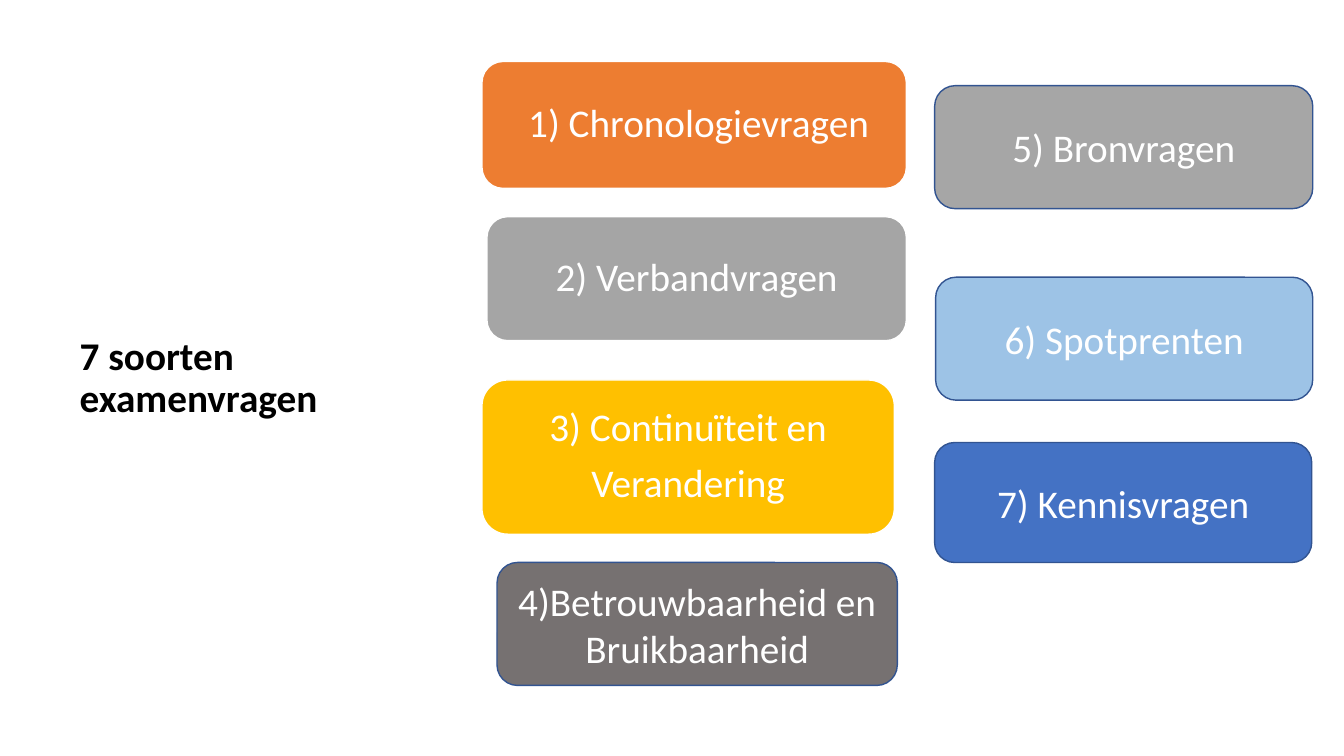
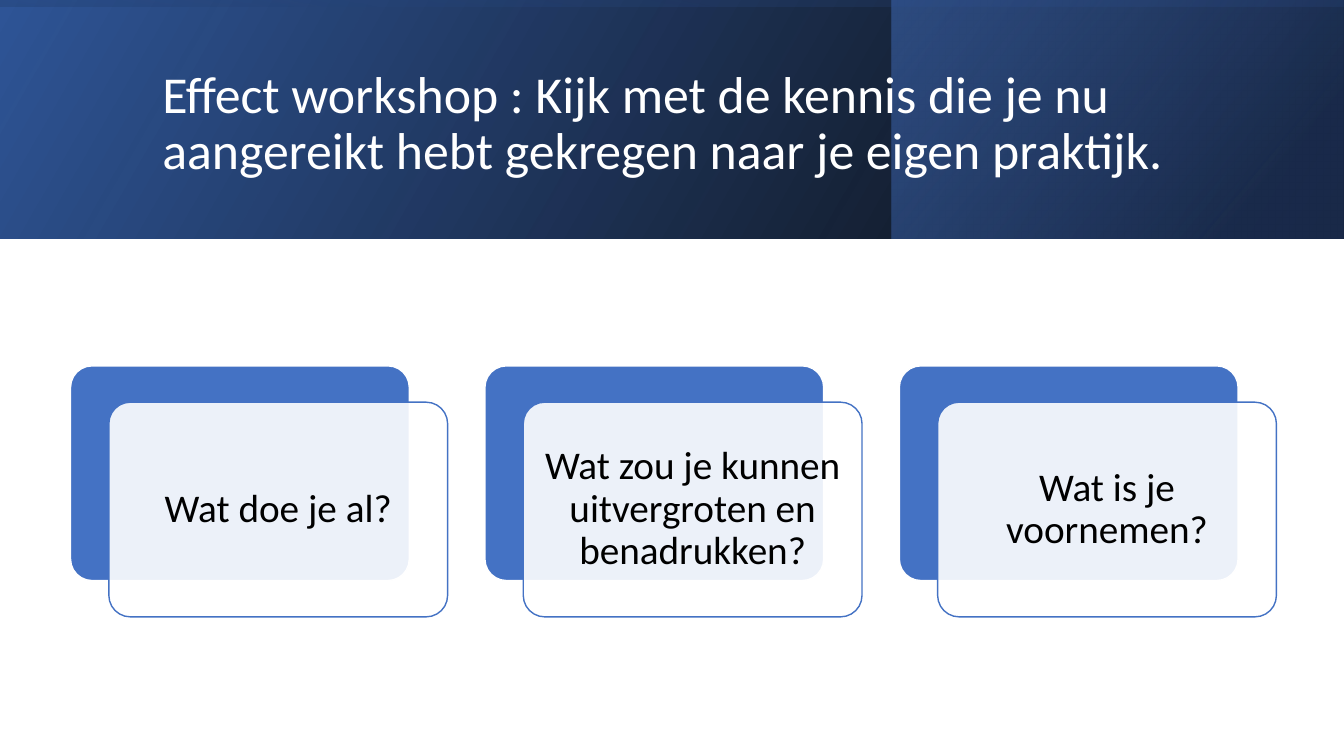
from dataclasses import dataclass
from typing import NamedTuple

from pptx import Presentation
from pptx.dml.color import RGBColor
from pptx.enum.shapes import MSO_SHAPE
from pptx.enum.text import MSO_ANCHOR, MSO_AUTO_SIZE, PP_ALIGN
from pptx.oxml import parse_xml
from pptx.oxml.ns import nsdecls, qn
from pptx.util import Inches, Pt

RECT, ROUND = MSO_SHAPE.RECTANGLE, MSO_SHAPE.ROUNDED_RECTANGLE
MIDDLE, NO_FIT = MSO_ANCHOR.MIDDLE, MSO_AUTO_SIZE.NONE
LEFT, CENTER = PP_ALIGN.LEFT, PP_ALIGN.CENTER


@dataclass(frozen=True)
class Theme:
    font: str = "Calibri"
    body: int = 28
    head: int = 37
    tight: float = 0.9
    gap: int = 10
    white: str = "FFFFFF"
    black: str = "000000"
    blue: str = "4472C4"
    deep: str = "2F5597"
    navy: str = "203864"
    edge: str = "325491"
    orange: str = "ED7D31"
    silver: str = "A5A5A5"
    gray: str = "A6A6A6"
    gold: str = "FFC000"
    slate: str = "767171"
    sky: str = "9DC3E6"


T = Theme()


class Box(NamedTuple):
    x: float
    y: float
    w: float
    h: float


class Style(NamedTuple):
    color: str
    size: int = T.body
    bold: bool = False
    align: PP_ALIGN = CENTER
    space: float = 1.0
    inset: tuple[float, float] = (0.1, 0.05)


class Card(NamedTuple):
    text: str
    box: Box
    fill: str
    line: str
    style: Style


class Stop(NamedTuple):
    pos: int
    color: str
    alpha: int = 100


class Band(NamedTuple):
    box: Box
    stops: tuple[Stop, Stop]
    angle: int
    turn: int = 0


LABEL = Style(T.white, space=T.tight, inset=(0.12, 0.06))
PLAIN = Style(T.white)
ASK = Style(T.black, space=T.tight, inset=(0.12, 0.12))

CARDS = (
    Card(" 1) Chronologievragen", Box(4.78, 0.61, 4.21, 1.26), T.orange, T.white, LABEL),
    Card("2) Verbandvragen", Box(4.83, 2.15, 4.16, 1.23), T.silver, T.white, LABEL),
    Card("3) Continuïteit en\nVerandering", Box(4.78, 3.77, 4.09, 1.53), T.gold, T.white, LABEL),
    Card("4)Betrouwbaarheid en Bruikbaarheid", Box(4.93, 5.58, 3.97, 1.22), T.slate, T.edge, PLAIN),
    Card("5) Bronvragen", Box(9.27, 0.85, 3.75, 1.22), T.gray, T.edge, PLAIN),
    Card("6) Spotprenten", Box(9.28, 2.75, 3.74, 1.22), T.sky, T.edge, PLAIN),
    Card("7) Kennisvragen", Box(9.27, 4.39, 3.74, 1.19), T.blue, T.edge, PLAIN),
)

BANDS = (
    Band(Box(0, 0, 13.33, 2.37), (Stop(0, T.black, 96), Stop(100, T.deep)), 330),
    Band(Box(8.84, 0, 4.48, 2.37), (Stop(19, T.navy, 68), Stop(100, T.blue, 48)), 320),
    Band(Box(5.48, -5.48, 2.37, 13.33), (Stop(23, T.deep, 16), Stop(99, T.black, 45)), 350, 270),
)

ASKS = ("Wat doe je al?", "Wat zou je kunnen uitvergroten en benadrukken?", "Wat is je voornemen?")
BACK = Box(0.7, 3.63, 3.36, 2.13)
STEP, SHIFT = 4.11, (0.38, 0.36)


def assign(item, values: dict) -> None:
    for name, value in values.items():
        setattr(item, name, value)


def write(shape, text: str, style: Style) -> None:
    frame = shape.text_frame
    side, edge = map(Inches, style.inset)
    assign(frame, dict(
        text=text, word_wrap=True, auto_size=NO_FIT, vertical_anchor=MIDDLE,
        margin_left=side, margin_right=side, margin_top=edge, margin_bottom=edge,
    ))
    for i, para in enumerate(frame.paragraphs):
        assign(para, dict(alignment=style.align, line_spacing=style.space,
                          space_before=Pt(T.gap if i else 0)))
        for run in para.runs:
            assign(run.font, dict(name=T.font, size=Pt(style.size), bold=style.bold))
            run.font.color.rgb = RGBColor.from_string(style.color)


def place(shape, box: Box) -> None:
    assign(shape, dict(zip(("left", "top", "width", "height"), map(Inches, box))))


def add_head(slide, text: str, box: Box, style: Style) -> None:
    place(slide.shapes.title, box)
    write(slide.shapes.title, text, style)


def add_round(slide, box: Box, fill: str, line: str):
    shape = slide.shapes.add_shape(ROUND, *map(Inches, box))
    shape.shadow.inherit = False
    shape.fill.solid()
    shape.fill.fore_color.rgb = RGBColor.from_string(fill)
    shape.line.color.rgb = RGBColor.from_string(line)
    shape.line.width = Pt(1)
    return shape


def add_band(slide, band: Band) -> None:
    """Draw a mirrored rectangle with a see-through gradient."""
    shape = slide.shapes.add_shape(RECT, *map(Inches, band.box))
    shape.shadow.inherit = False
    shape.rotation = band.turn
    shape.line.fill.background()
    stops = "".join(
        f'<a:gs pos="{s.pos * 1000}"><a:srgbClr val="{s.color}">'
        f'<a:alpha val="{s.alpha * 1000}"/></a:srgbClr></a:gs>'
        for s in band.stops
    )
    grad = parse_xml(
        f'<a:gradFill {nsdecls("a")} rotWithShape="1"><a:gsLst>{stops}</a:gsLst>'
        f'<a:lin ang="{band.angle * 60000}" scaled="0"/></a:gradFill>'
    )
    props = shape._element.spPr
    props.find(qn("a:xfrm")).set("flipH", "1")
    props.find(qn("a:prstGeom")).addnext(grad)


def add_ask(slide, text: str, box: Box) -> None:
    """Draw a blue card with a translucent text card shifted over it."""
    back = add_round(slide, box, T.blue, T.white)
    over = box._replace(x=box.x + SHIFT[0], y=box.y + SHIFT[1])
    front = add_round(slide, over, T.white, T.blue)
    for shape in (back, front):
        shape.adjustments[0] = 0.1
    color = front._element.spPr.find(qn("a:solidFill"))[0]
    color.append(parse_xml(f'<a:alpha {nsdecls("a")} val="90000"/>'))
    write(front, text, ASK)


def draw_kinds(slide) -> None:
    add_head(slide, "7 soorten examenvragen", Box(0.69, 0.7, 3.74, 6.11),
             Style(T.black, bold=True, align=LEFT, space=T.tight))
    for card in CARDS:
        write(add_round(slide, card.box, card.fill, card.line), card.text, card.style)


def draw_effect(slide) -> None:
    for band in BANDS:
        add_band(slide, band)
    title = slide.shapes.title._element
    title.getparent().append(title)
    add_head(slide,
             "Effect workshop : Kijk met de kennis die je nu aangereikt hebt "
             "gekregen naar je eigen praktijk.",
             Box(1.51, 0.38, 10.63, 1.72),
             Style(T.white, T.head, align=LEFT, space=T.tight))
    for i, text in enumerate(ASKS):
        add_ask(slide, text, BACK._replace(x=BACK.x + i * STEP))


def main() -> None:
    deck = Presentation()
    assign(deck, dict(slide_width=Inches(13.33), slide_height=Inches(7.5)))
    plain = deck.slide_layouts.get_by_name("Title Only")
    for draw in (draw_kinds, draw_effect):
        draw(deck.slides.add_slide(plain))
    deck.save("out.pptx")


if __name__ == "__main__":
    main()
